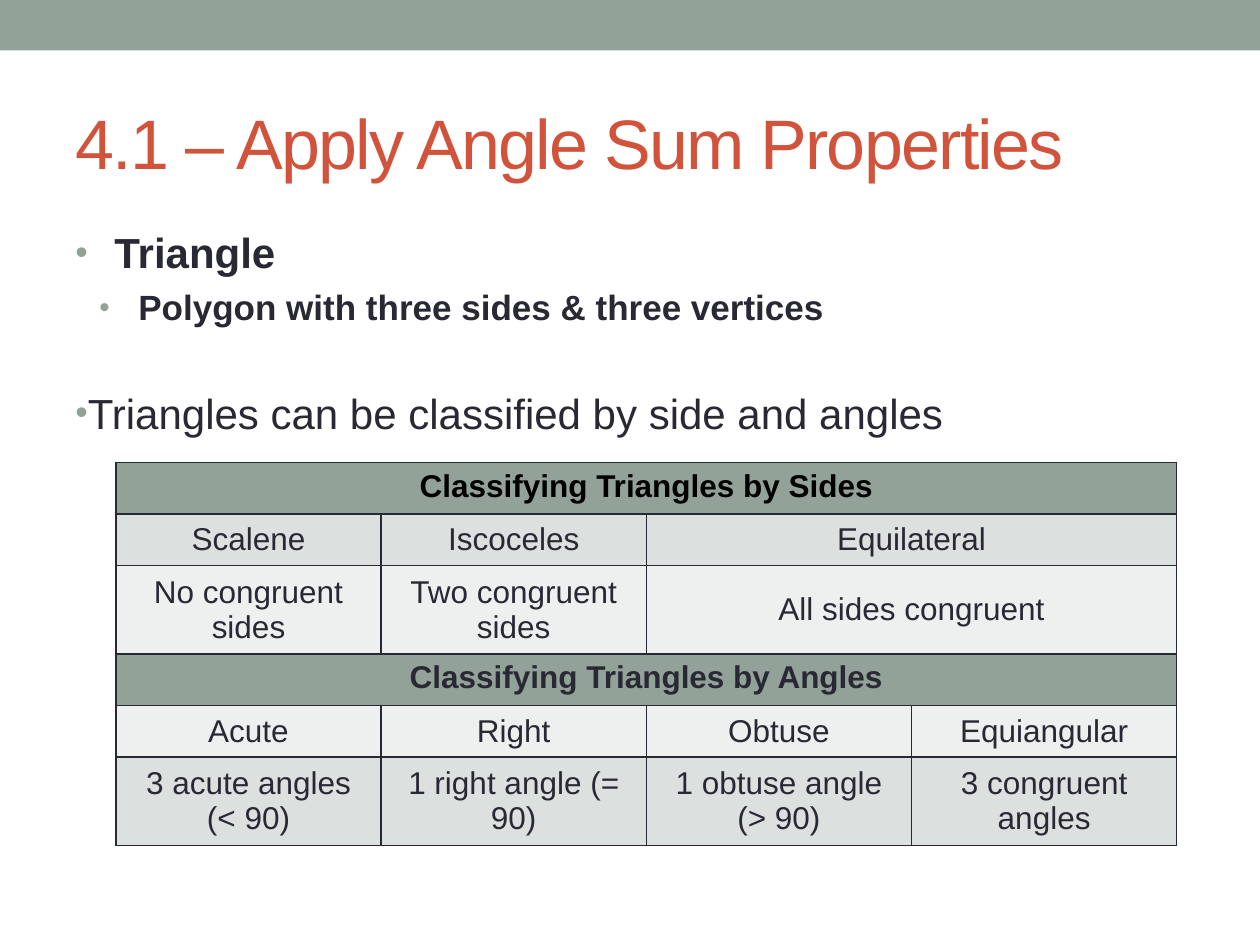
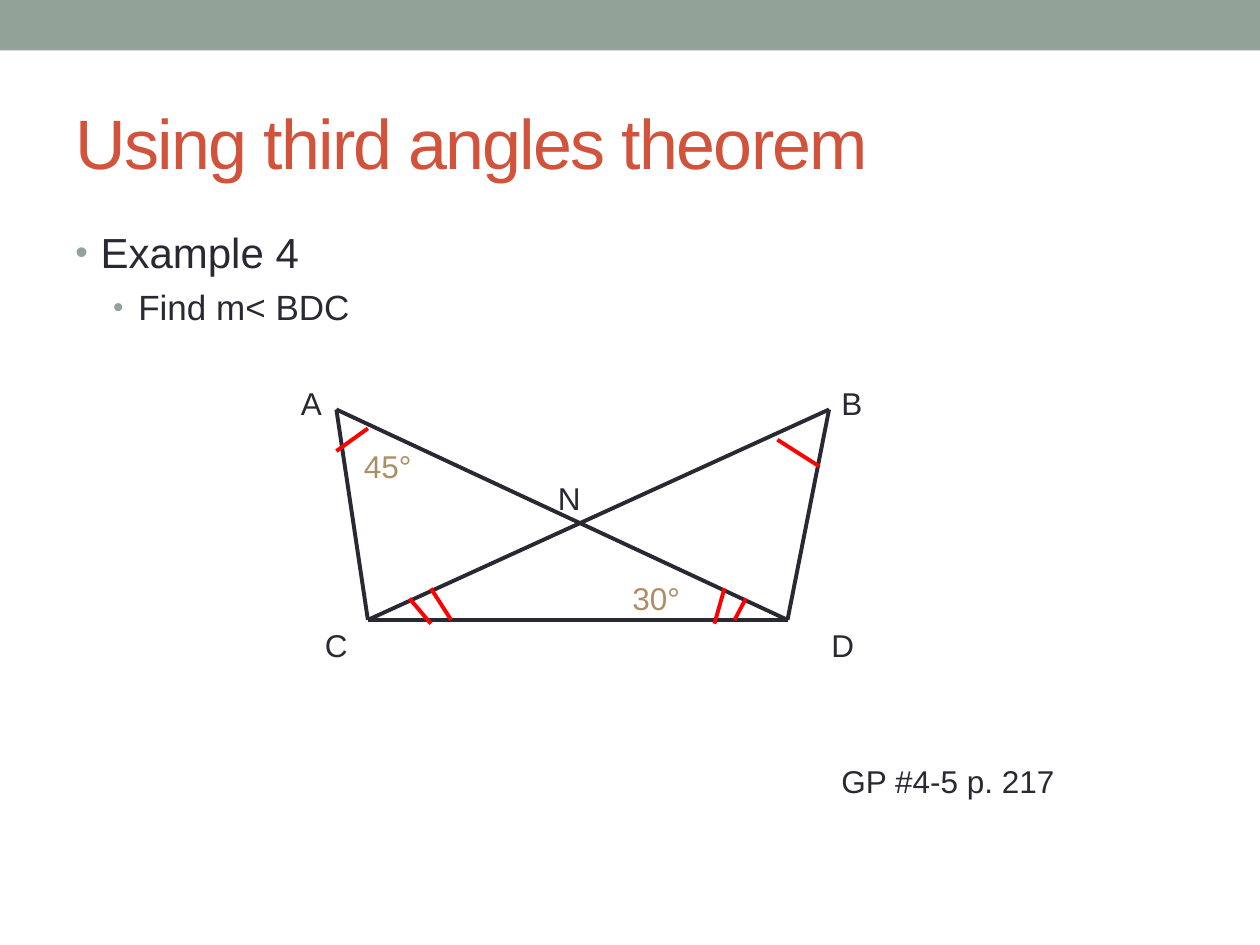
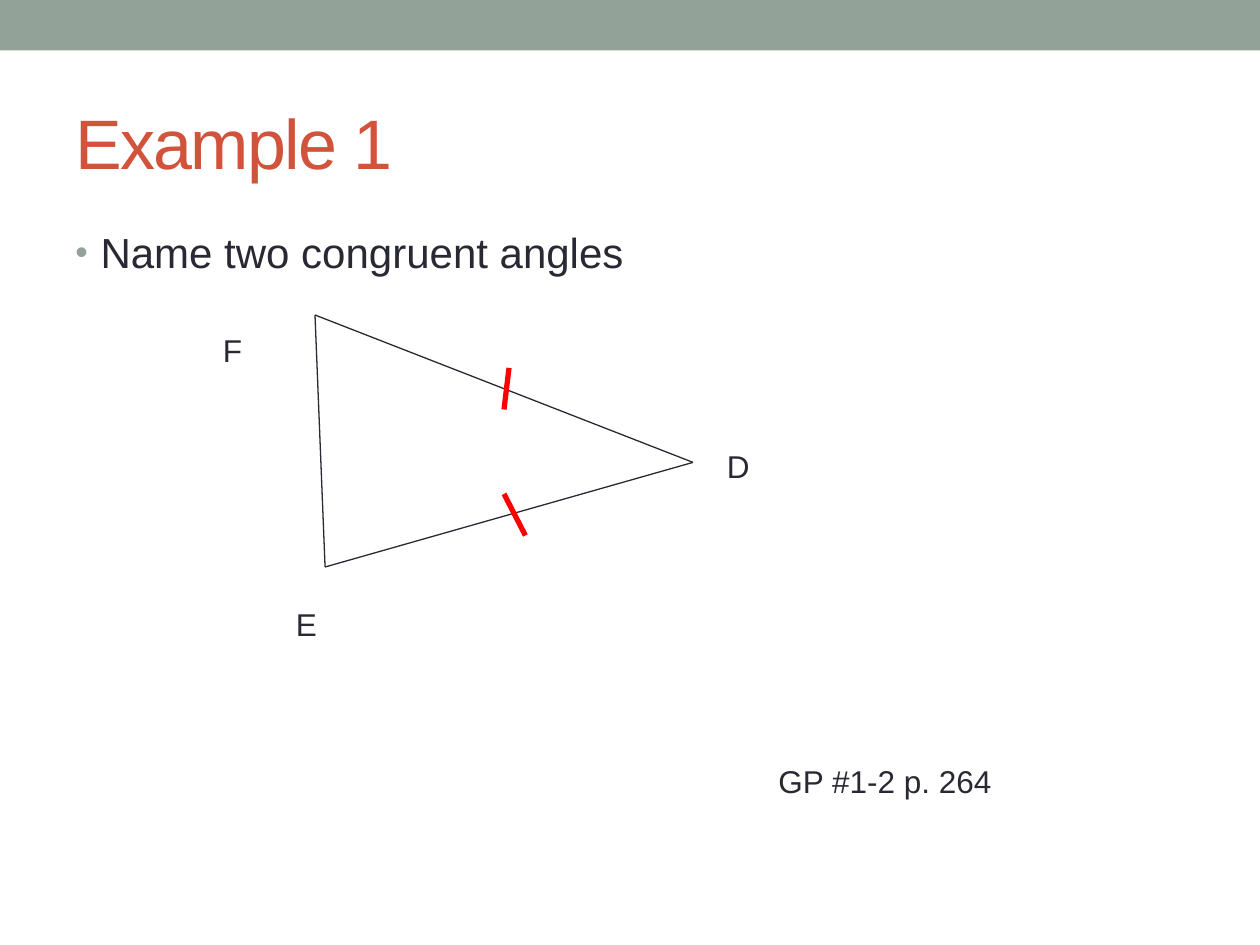
from dataclasses import dataclass

from pptx import Presentation
from pptx.dml.color import RGBColor
from pptx.enum.shapes import MSO_CONNECTOR as Connector, MSO_SHAPE as Shape
from pptx.enum.text import MSO_ANCHOR as Anchor, MSO_AUTO_SIZE as AutoSize, PP_ALIGN as Align
from pptx.oxml.ns import qn
from pptx.util import Inches, Pt
from lxml.etree import SubElement, Element


@dataclass(frozen=True)
class Theme:
    font: str = "Arial"
    band: str = "93A299"
    title: str = "D2533C"
    ink: str = "292934"
    black: str = "000000"
    measure: str = "AD8F67"
    mark: str = "FF0000"
    dark_row: str = "DCE0DE"
    light_row: str = "EEF0EF"
    title_size: int = 40
    body_sizes: tuple = (24, 20)
    body_gaps: tuple = (2, 5)
    label_size: int = 18


@dataclass
class Bullet:
    text: str
    level: int = 0
    margin: float = 0.2
    hang: float = 0.2
    bold: bool = False
    gap: int | None = None


class LessonDeck:
    TITLE_ONLY = 5

    def __init__(self, theme):
        self.theme = theme
        self.deck = Presentation()
        self.deck.slide_width = Inches(10)
        self.deck.slide_height = Inches(7.5)
        self.layout = self.deck.slide_layouts[self.TITLE_ONLY]
        self.page = None

    def add_page(self, title):
        self.page = self.deck.slides.add_slide(self.layout)
        if len(self.deck.slides) == 1:
            self.add_layout_band()
        box = self.page.shapes.title
        box.left, box.top, box.width, box.height = map(Inches, (0.5, 0.58, 9, 1.08))
        frame = box.text_frame
        frame.auto_size = AutoSize.NONE
        frame.vertical_anchor = Anchor.MIDDLE
        para = frame.paragraphs[0]
        para.alignment = Align.LEFT
        run = self.add_run(para, title, self.theme.title_size, self.theme.title)
        run.font._element.set("spc", "-100")

    def add_layout_band(self):
        """Draw the top band, then hand it to the layout so every page shows it."""
        band = self.page.shapes.add_shape(
            Shape.RECTANGLE, 0, 0, self.deck.slide_width, Inches(0.4))
        band.shadow.inherit = False
        band.fill.solid()
        band.fill.fore_color.rgb = RGBColor.from_string(self.theme.band)
        band.line.fill.background()
        self.layout.shapes.element.insert(2, band.element)

    def add_run(self, para, text, size, color, bold=False):
        run = para.add_run()
        run.text = text
        font = run.font
        font.name, font.size, font.bold = self.theme.font, Pt(size), bold
        font.color.rgb = RGBColor.from_string(color)
        return run

    def add_text_frame(self, left, top, width, height):
        box = self.page.shapes.add_textbox(*map(Inches, (left, top, width, height)))
        box.text_frame.word_wrap = True
        return box.text_frame

    def add_bullets(self, *bullets):
        frame = self.add_text_frame(0.5, 1.75, 9, 5.33)
        for index, bullet in enumerate(bullets):
            para = frame.add_paragraph() if index else frame.paragraphs[0]
            para.level = bullet.level
            gap = self.theme.body_gaps[bullet.level] if bullet.gap is None else bullet.gap
            para.space_before = Pt(gap)
            props = para._p.get_or_add_pPr()
            props.set("marL", str(Inches(bullet.margin)))
            props.set("indent", str(-Inches(bullet.hang)))
            color = SubElement(props, qn("a:buClr"))
            SubElement(color, qn("a:srgbClr"), val=self.theme.band)
            SubElement(props, qn("a:buSzPct"), val="85000")
            SubElement(props, qn("a:buFont"), typeface=self.theme.font)
            SubElement(props, qn("a:buChar"), char="•")
            self.add_run(para, bullet.text, self.theme.body_sizes[bullet.level],
                         self.theme.ink, bullet.bold)

    def add_label(self, text, left, top, width, color=None):
        frame = self.add_text_frame(left, top, width, 0.4)
        frame.auto_size = AutoSize.SHAPE_TO_FIT_TEXT
        self.add_run(frame.paragraphs[0], text, self.theme.label_size,
                     color or self.theme.ink)

    def add_line(self, start, end, color, width):
        line = self.page.shapes.add_connector(
            Connector.STRAIGHT, *map(Inches, (*start, *end)))
        line.line.color.rgb = RGBColor.from_string(color)
        line.line.width = Pt(width)
        SubElement(line.element.spPr, qn("a:effectLst"))

    def add_sides(self, points, sides, width):
        """Join named points; each side is a pair of point letters."""
        for start, end in sides:
            self.add_line(points[start], points[end], self.theme.ink, width)

    def add_marks(self, marks, width):
        for start, end in marks:
            self.add_line(start, end, self.theme.mark, width)

    def add_table(self, left, top, width, heights, rows):
        """Rows hold (fill, texts, heading color or None); the last text spans what is left."""
        columns = max(len(texts) for _, texts, _ in rows)
        table = self.page.shapes.add_table(
            len(rows), columns, Inches(left), Inches(top),
            Inches(width), Inches(sum(heights))).table
        table.first_row = table.horz_banding = False
        for row_index, (fill, texts, heading) in enumerate(rows):
            table.rows[row_index].height = Inches(heights[row_index])
            cells = table.rows[row_index].cells
            for cell in cells:
                self.style_cell(cell, fill)
            last = len(texts) - 1
            if last < columns - 1:
                table.cell(row_index, last).merge(table.cell(row_index, columns - 1))
            for column, text in enumerate(texts):
                cell = table.cell(row_index, column)
                cell.vertical_anchor = Anchor.TOP if heading else Anchor.MIDDLE
                para = cell.text_frame.paragraphs[0]
                para.alignment = Align.CENTER
                self.add_run(para, text, self.theme.label_size,
                             heading or self.theme.ink, bool(heading))

    def style_cell(self, cell, fill):
        cell.fill.solid()
        cell.fill.fore_color.rgb = RGBColor.from_string(fill)
        props = cell._tc.get_or_add_tcPr()
        for position, side in enumerate("LRTB"):
            border = Element(qn(f"a:ln{side}"), w=str(Pt(1)))
            solid = SubElement(border, qn("a:solidFill"))
            SubElement(solid, qn("a:srgbClr"), val=self.theme.ink)
            props.insert(position, border)


def build_classification(lesson):
    theme = lesson.theme
    lesson.add_page("4.1 – Apply Angle Sum Properties")
    lesson.add_bullets(
        Bullet("Triangle", margin=0.31, hang=0.31, bold=True),
        Bullet("Polygon with three sides & three vertices", level=1,
               margin=0.5, hang=0.31, bold=True),
        Bullet("Triangles can be classified by side and angles",
               margin=0.06, hang=0.31, gap=34))
    lesson.add_table(0.92, 3.67, 8.42, (0.41, 0.41, 0.66) * 2, [
        (theme.band, ["Classifying Triangles by Sides"], theme.black),
        (theme.dark_row, ["Scalene", "Iscoceles", "Equilateral"], None),
        (theme.light_row,
         ["No congruent sides", "Two congruent sides", "All sides congruent"], None),
        (theme.band, ["Classifying Triangles by Angles"], theme.ink),
        (theme.light_row, ["Acute", "Right", "Obtuse", "Equiangular"], None),
        (theme.dark_row, ["3 acute angles (< 90)", "1 right angle (= 90)",
                          "1 obtuse angle (> 90)", "3 congruent angles"], None),
    ])


def build_third_angles(lesson):
    lesson.add_page("Using third angles theorem")
    lesson.add_bullets(Bullet("Example 4"), Bullet("Find m< BDC", level=1, margin=0.5))
    corners = {"A": (2.67, 3.25), "B": (6.58, 3.25), "C": (2.92, 4.92), "D": (6.25, 4.92)}
    lesson.add_sides(corners, ("CD", "DB", "BC", "CA", "AD"), 2.25)
    for letter, left, top, width in (
            ("A", 2.29, 3, 0.38), ("C", 2.48, 4.92, 0.31), ("B", 6.58, 3, 0.33),
            ("D", 6.5, 4.92, 0.42), ("N", 4.33, 3.75, 0.42)):
        lesson.add_label(letter, left, top, width)
    lesson.add_label("45°", 2.79, 3.5, 0.62, lesson.theme.measure)
    lesson.add_label("30°", 4.92, 4.55, 0.6, lesson.theme.measure)
    lesson.add_marks([
        ((2.92, 3.4), (2.67, 3.58)), ((6.17, 3.49), (6.5, 3.7)),
        ((5.92, 4.75), (5.83, 4.92)), ((5.75, 4.67), (5.67, 4.95)),
        ((3.25, 4.75), (3.42, 4.95)), ((3.42, 4.67), (3.58, 4.92))], 2.25)
    lesson.add_label("GP #4-5 p. 217", 6.58, 6, 2.58)


def build_congruent_angles(lesson):
    lesson.add_page("Example 1")
    lesson.add_bullets(Bullet("Name two congruent angles"))
    corners = {"F": (2.5, 2.5), "E": (2.58, 4.5), "D": (5.5, 3.67)}
    lesson.add_sides(corners, ("FE", "FD", "ED"), 0.75)
    lesson.add_marks([((4, 3.25), (4.04, 2.92)), ((4, 3.92), (4.17, 4.25))], 3)
    for letter, left, top, width in (
            ("F", 1.67, 2.58, 0.58), ("E", 2.25, 4.75, 0.5), ("D", 5.67, 3.5, 0.42)):
        lesson.add_label(letter, left, top, width)
    lesson.add_label("GP #1-2 p. 264", 6.08, 6, 3.33)


def main():
    lesson = LessonDeck(Theme())
    build_classification(lesson)
    build_third_angles(lesson)
    build_congruent_angles(lesson)
    lesson.deck.save("out.pptx")


if __name__ == "__main__":
    main()
